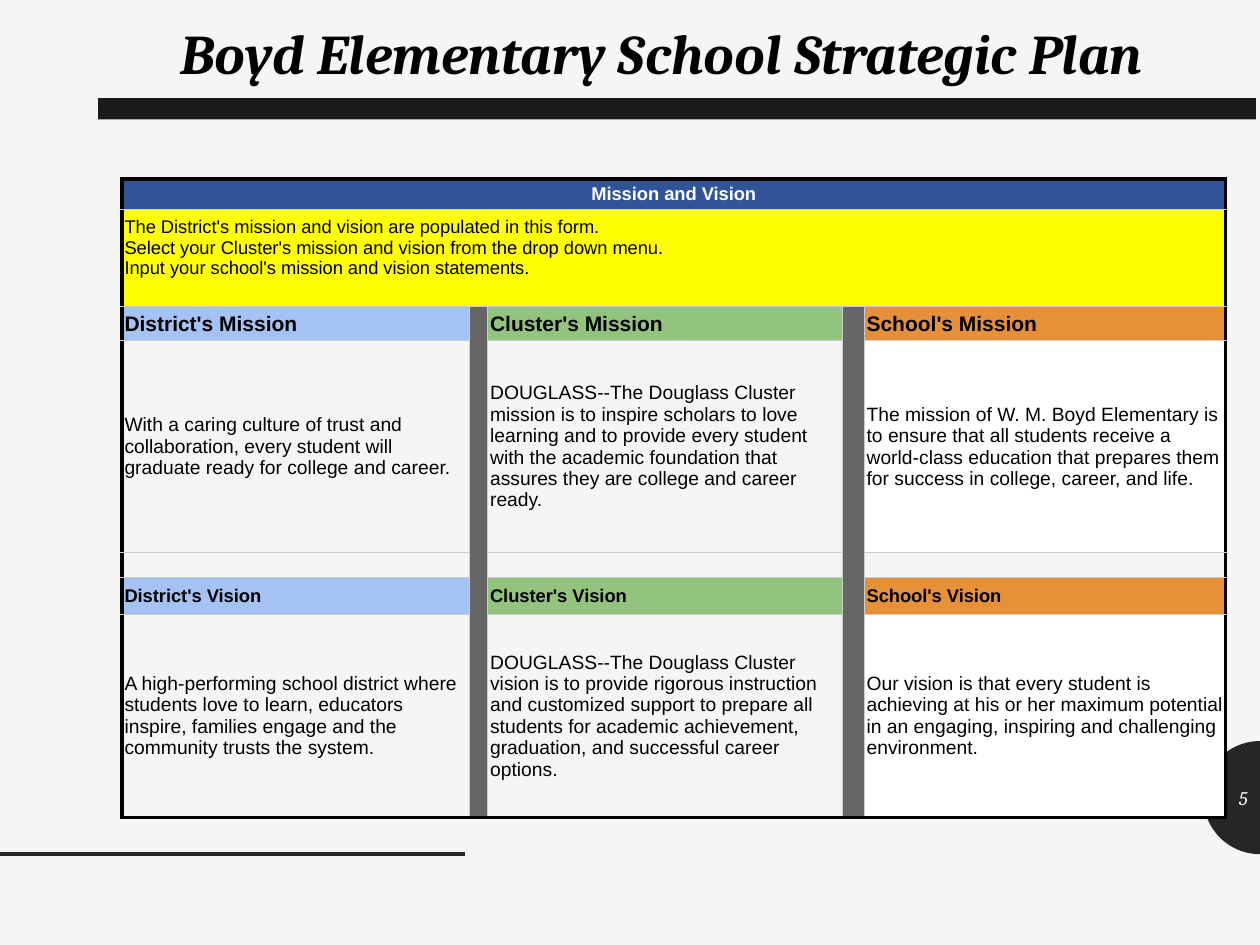
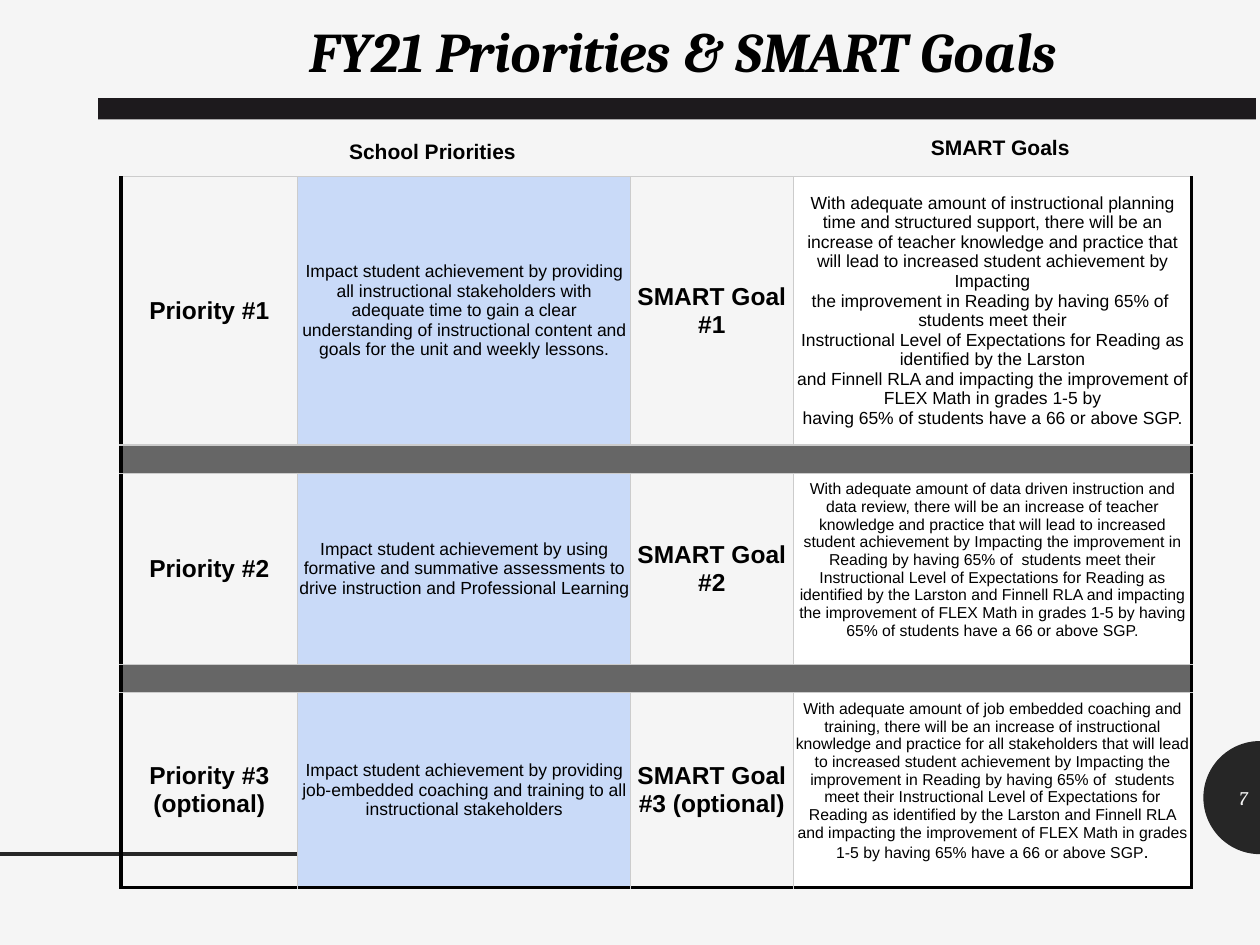
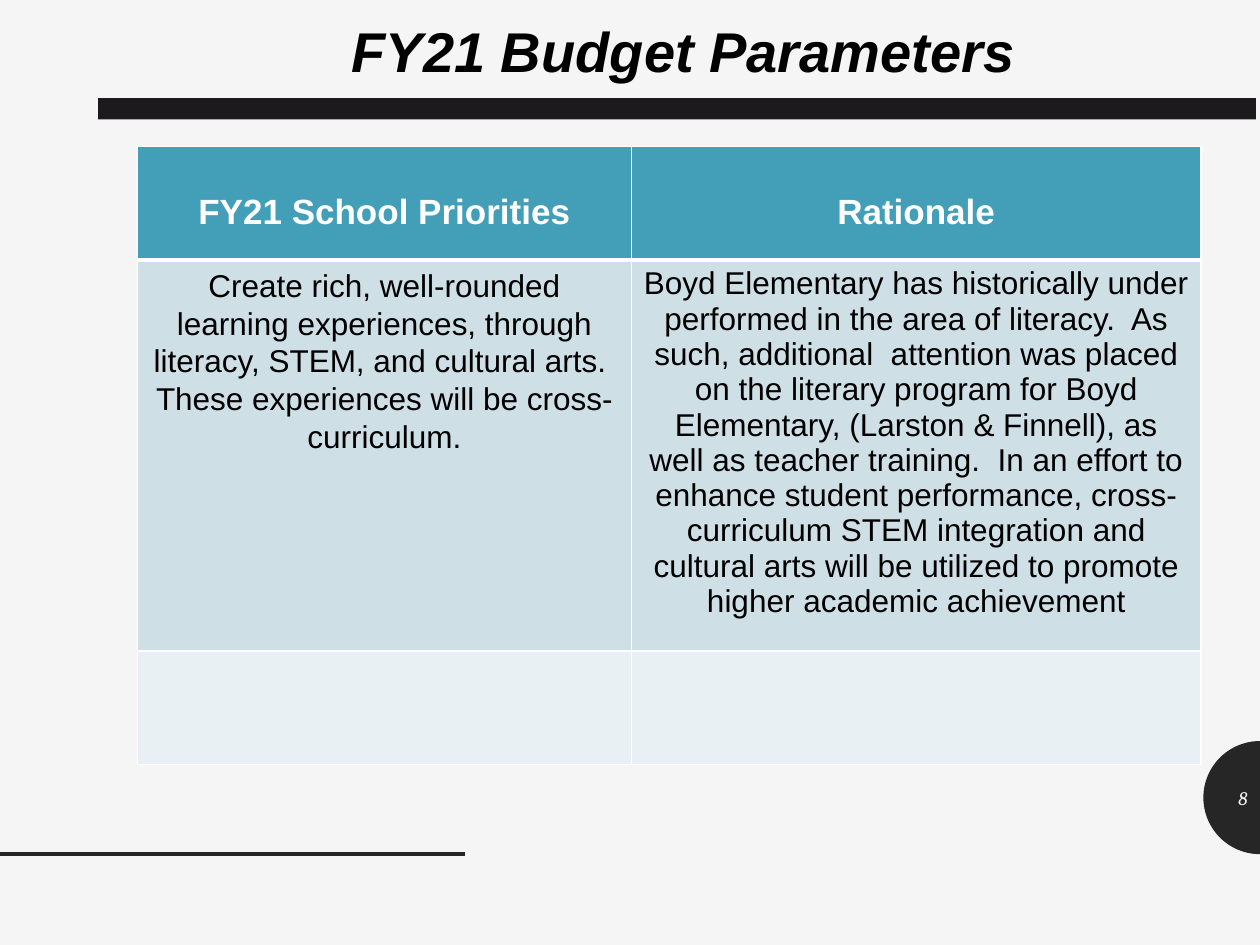
from math import cos, pi, sin

from lxml.etree import SubElement
from pptx import Presentation
from pptx.dml.color import RGBColor
from pptx.enum.shapes import MSO_CONNECTOR, MSO_SHAPE
from pptx.enum.text import MSO_ANCHOR as Anchor, PP_ALIGN as Align
from pptx.oxml import parse_xml
from pptx.oxml.ns import nsdecls, qn
from pptx.util import Cm, Pt

BLACK, WHITE, PAPER, DARK, BAND = "000000", "FFFFFF", "F5F5F5", "262626", "1D1A1D"
GRAY, RULE, NAVY, YELLOW = "666666", "CCCCCC", "305496", "FFFF00"
BLUE, GREEN, ORANGE, PALE_BLUE = "A4C2F4", "93C47D", "E69138", "C9DAF8"
TEAL, TEAL_MID, TEAL_PALE = "439EB7", "CFDFE6", "E9F0F3"

OUTER, INNER = (BLACK, 2.25), (RULE, 0.75)
THIN_WHITE, THICK_WHITE = (WHITE, 1), (WHITE, 3)

# Cell styles: font size, bold, colour, alignment, margins (left, top, right, bottom), anchor
TIGHT, TIGHTER = (0.05, 0.03, 0.05, 0.03), (0.03, 0.03, 0.03, 0.03)
ROOMY = (0.25, 0.13, 0.25, 0.13)
STYLES = {
    "banner": (10.5, True, WHITE, Align.CENTER, TIGHT, Anchor.MIDDLE),
    "guide": (10.5, False, BLACK, Align.LEFT, (0.05, 0.03, 0.05, 0.44), Anchor.MIDDLE),
    "mission": (12, True, BLACK, Align.LEFT, TIGHT, Anchor.MIDDLE),
    "vision": (10.5, True, BLACK, Align.LEFT, TIGHT, Anchor.MIDDLE),
    "statement": (11, False, BLACK, Align.LEFT, TIGHT, Anchor.MIDDLE),
    "label": (14, True, BLACK, Align.CENTER, TIGHTER, Anchor.MIDDLE),
    "goal": (10, False, BLACK, Align.CENTER, TIGHTER, Anchor.MIDDLE),
    "long goal": (9, False, BLACK, Align.CENTER, (0.03, 0.03, 0.03, 0.39), Anchor.MIDDLE),
    "heading": (20, True, WHITE, Align.CENTER, (0.25, 0.94, 0.25, 0.13), Anchor.TOP),
    "body": (18, False, BLACK, Align.CENTER, ROOMY, Anchor.TOP),
    "gap": (8, False, BLACK, Align.LEFT, TIGHTER, Anchor.MIDDLE),
}

# Each cell: text, style, fill
GAP = ("", "gap", None)
BAR = ("", "gap", GRAY)


def plan_row(style, texts, fills):
    district, cluster, school = [(text, style, fill) for text, fill in zip(texts, fills)]
    return [district, BAR, cluster, BAR, school]


HEADING_FILLS, STATEMENT_FILLS = (BLUE, GREEN, ORANGE), (None, None, WHITE)
MISSION_ROWS = [
    [("Mission and Vision", "banner", NAVY)] + [GAP] * 4,
    [("The District's mission and vision are populated in this form. \n"
      "Select your Cluster's mission and vision from the drop down menu. \n"
      "Input your school's mission and vision statements.", "guide", YELLOW)] + [GAP] * 4,
    plan_row("mission", ("District's Mission", "Cluster's Mission", "School's Mission"),
             HEADING_FILLS),
    plan_row("statement", (
        "With a caring culture of trust and collaboration, every student will graduate "
        "ready for college and career.",
        "DOUGLASS--The Douglass Cluster mission is to inspire scholars to love learning and "
        "to provide every student with the academic foundation that assures they are "
        "college and career ready.",
        "The mission of W. M. Boyd Elementary is to ensure that all students receive a "
        "world-class education that prepares them for success in college, career, and life."),
        STATEMENT_FILLS),
    plan_row("gap", ("", "", ""), (None, None, None)),
    plan_row("vision", ("District's Vision", "Cluster's Vision", "School's Vision"),
             HEADING_FILLS),
    plan_row("statement", (
        "A high-performing school district where students love to learn, educators inspire, "
        "families engage and the community trusts the system.",
        "DOUGLASS--The Douglass Cluster vision is to provide rigorous instruction and "
        "customized support to prepare all students for academic achievement, graduation, "
        "and successful career options.",
        "Our vision is that every student is achieving at his or her maximum potential in an "
        "engaging, inspiring and challenging environment."),
        STATEMENT_FILLS),
]


def goal_row(number, priority, goal, goal_style):
    return [(f"Priority #{number}", "label", None), (priority, "goal", PALE_BLUE),
            (f"SMART Goal #{number}", "label", None), (goal, goal_style, WHITE)]


GOAL_ROWS = [
    goal_row("1", "Impact student achievement by providing all instructional stakeholders with "
             "adequate time to gain a clear understanding of instructional content and goals "
             "for the unit and weekly lessons.",
             "With adequate amount of instructional planning time and structured support, there "
             "will be an increase of teacher knowledge and practice that will lead to increased "
             "student achievement by Impacting\n"
             "the improvement in Reading by having 65% of  students meet their\n"
             "Instructional Level of Expectations for Reading as identified by the Larston\n"
             "and Finnell RLA and impacting the improvement of FLEX Math in grades 1-5 by\n"
             "having 65% of students have a 66 or above SGP.", "goal"),
    [BAR] * 4,
    goal_row("2", "Impact student achievement by using formative and summative assessments to "
             "drive instruction and Professional Learning",
             "With adequate amount of data driven instruction and data review, there will be an "
             "increase of teacher knowledge and practice that will lead to increased student "
             "achievement by Impacting the improvement in Reading by having 65% of  students "
             "meet their Instructional Level of Expectations for Reading as identified by the "
             "Larston and Finnell RLA and impacting the improvement of FLEX Math in grades 1-5 "
             "by having 65% of students have a 66 or above SGP.", "long goal"),
    [BAR] * 4,
    goal_row("3 (optional)", "Impact student achievement by providing job-embedded coaching and "
             "training to all instructional stakeholders",
             "With adequate amount of job embedded coaching and training, there will be an "
             "increase of instructional knowledge and practice for all stakeholders that will "
             "lead to increased student achievement by Impacting the improvement in Reading by "
             "having 65% of  students meet their Instructional Level of Expectations for Reading "
             "as identified by the Larston and Finnell RLA and impacting the improvement of FLEX "
             "Math in grades 1-5 by having 65% have a 66 or above SGP.", "long goal"),
]

BUDGET_ROWS = [
    [("FY21 School Priorities", "heading", TEAL), ("Rationale", "heading", TEAL)],
    [("Create rich, well-rounded learning experiences, through literacy, STEM, and cultural "
      "arts.  These experiences will be cross-curriculum.", "body", TEAL_MID),
     ("Boyd Elementary has historically under performed in the area of literacy.  As such, "
      "additional  attention was placed on the literary program for Boyd Elementary, (Larston "
      "& Finnell), as well as teacher training.  In an effort to enhance student performance, "
      "cross-curriculum STEM integration and cultural arts will be utilized to promote higher "
      "academic achievement", "body", TEAL_MID)],
    [("", "body", TEAL_PALE)] * 2,
]

# Boxes are left, top, width, height in cm
TITLE_BOX = (2.44, 0.2, 22.68, 1.63)
PAGES = [
    dict(number=5, title="Boyd Elementary School Strategic Plan", font="Cambria",
         title_box=(1.24, 0.25, 24.21, 1.63), labels=[], rows=MISSION_ROWS, at=(2.46, 3.61),
         widths=(7.01, 0.36, 7.16, 0.43, 7.29),
         heights=(0.61, 1.96, 0.69, 4.27, 0.51, 0.74, 4.09),
         merges=[(0, 0, 0, 4), (1, 0, 1, 4), (2, 1, 6, 1), (2, 3, 6, 3)],
         edges=dict(L=OUTER, R=OUTER, T=OUTER, B=OUTER), inner=INNER),
    dict(number=7, title="FY21 Priorities & SMART Goals", font="Cambria", title_box=TITLE_BOX,
         labels=[("School Priorities", (6.55, 2.67, 4.34, 0.76)),
                 ("SMART Goals", (16.84, 2.59, 6.65, 0.76))],
         rows=GOAL_ROWS, at=(2.44, 3.56), widths=(3.56, 6.71, 3.28, 8.03),
         heights=(5.41, 0.57, 3.86, 0.57, 3.91), merges=[(1, 0, 1, 3), (3, 0, 3, 3)],
         edges=dict(L=OUTER, R=OUTER, T=INNER, B=OUTER), inner=INNER),
    dict(number=8, title="FY21 Budget Parameters", font="Arial", title_box=TITLE_BOX,
         labels=[], rows=BUDGET_ROWS, at=(2.77, 2.95), widths=(9.96, 11.48),
         heights=(2.29, 7.85, 2.29), merges=[],
         edges=dict.fromkeys("LRTB", THIN_WHITE), inner=THIN_WHITE),
]


def color(value):
    return RGBColor.from_string(value)


def set_font(font, size, value, name="Arial", bold=False, italic=False):
    font.size, font.name, font.bold, font.italic = Pt(size), name, bold, italic
    font.color.rgb = color(value)


def paint(shape, value):
    shape.shadow.inherit = False
    shape.fill.solid()
    shape.fill.fore_color.rgb = color(value)
    shape.line.fill.background()


def add_text(page, text, box, align, *font, anchor=Anchor.TOP, **font_options):
    frame = page.shapes.add_textbox(*map(Cm, box)).text_frame
    frame.word_wrap = True
    frame.vertical_anchor = anchor
    para = frame.paragraphs[0]
    para.text, para.alignment = text, align
    set_font(para.font, *font, **font_options)


def add_backdrop(page):
    """Half disc at the right edge, footer line and title band."""
    page.background.fill.solid()
    page.background.fill.fore_color.rgb = color(PAPER)

    center_x, center_y, radius, steps = 25.4, 16.08, 1.14, 48
    points = [(Cm(center_x - radius * sin(pi * i / steps)),
               Cm(center_y - radius * cos(pi * i / steps))) for i in range(steps + 1)]
    outline = page.shapes.build_freeform(*points[0], scale=1.0)
    outline.add_line_segments(points[1:], close=True)
    paint(outline.convert_to_shape(), DARK)

    line = page.shapes.add_connector(MSO_CONNECTOR.STRAIGHT, 0, Cm(17.22), Cm(9.37), Cm(17.22))
    line.line.color.rgb, line.line.width = color(DARK), Pt(2)
    SubElement(line._element.spPr, qn("a:effectLst"))

    band = page.shapes.add_shape(MSO_SHAPE.RECTANGLE, *map(Cm, (1.98, 1.98, 23.34, 0.43)))
    paint(band, BAND)


def set_borders(cell, borders):
    properties = cell._tc.get_or_add_tcPr()
    for place, side in enumerate("LRTB"):
        value, width = borders[side]
        properties.insert(place, parse_xml(
            f'<a:ln{side} {nsdecls("a")} w="{Pt(width)}"><a:solidFill>'
            f'<a:srgbClr val="{value}"/></a:solidFill></a:ln{side}>'))


def fill_cell(cell, text, style, fill):
    size, bold, value, align, margins, anchor = STYLES[style]
    cell.margin_left, cell.margin_top, cell.margin_right, cell.margin_bottom = map(Cm, margins)
    cell.vertical_anchor = anchor
    if fill:
        cell.fill.solid()
        cell.fill.fore_color.rgb = color(fill)
    else:
        cell.fill.background()
    para = cell.text_frame.paragraphs[0]
    para.text, para.alignment = text, align
    set_font(para.font, size, value, bold=bold)
    if not text:
        SubElement(para._p, qn("a:endParaRPr"), sz=str(size * 100))


def add_grid(page, rows, at, widths, heights, merges, edges, inner):
    size = (sum(widths), sum(heights))
    table = page.shapes.add_table(len(rows), len(widths), *map(Cm, at + size)).table
    table.first_row = table.horz_banding = False
    for column, width in zip(table.columns, widths):
        column.width = Cm(width)
    for row, height in zip(table.rows, heights):
        row.height = Cm(height)
    for top, left, bottom, right in merges:
        table.cell(top, left).merge(table.cell(bottom, right))
    for r, row in enumerate(rows):
        for c, content in enumerate(row):
            cell = table.cell(r, c)
            fill_cell(cell, *content)
            tall, wide = (cell.span_height, cell.span_width) if cell.is_merge_origin else (1, 1)
            at_edge = dict(L=c == 0, R=c + wide == len(widths), T=r == 0, B=r + tall == len(rows))
            set_borders(cell, {side: edges[side] if at_edge[side] else inner for side in "LRTB"})
    return table


def style_budget(table):
    """Thick rule under the headings and looser lines in the first answer."""
    for c in range(2):
        for r, side in ((0, "B"), (1, "T")):
            border = table.cell(r, c)._tc.tcPr.find(qn(f"a:ln{side}"))
            border.set("w", str(Pt(THICK_WHITE[1])))
    answer = table.cell(1, 0).text_frame.paragraphs[0]
    answer.line_spacing, answer.space_after = 1.07, Pt(8)


def enlarge_last_stop(table):
    para = table.cell(4, 3).text_frame.paragraphs[0]
    para.runs[0].text = para.text[:-1]
    span = para.add_run()
    span.text, span.font.size = ".", Pt(10.5)


FINISH = {7: enlarge_last_stop, 8: style_budget}


def main():
    deck = Presentation()
    deck.slide_width, deck.slide_height = Cm(25.4), Cm(19.05)
    for content in PAGES:
        page = deck.slides.add_slide(deck.slide_layouts[6])
        add_backdrop(page)
        add_text(page, content["title"], content["title_box"], Align.CENTER, 32, BLACK,
                 name=content["font"], bold=True, italic=True)
        for label, box in content["labels"]:
            add_text(page, label, box, Align.CENTER, 12, BLACK, bold=True)
        keys = ("rows", "at", "widths", "heights", "merges", "edges", "inner")
        table = add_grid(page, *(content[key] for key in keys))
        if content["number"] in FINISH:
            FINISH[content["number"]](table)
        add_text(page, str(content["number"]), (24.26, 15.57, 1.14, 1.02), Align.RIGHT, 11, PAPER,
                 name="Cambria", italic=True, anchor=Anchor.MIDDLE)
    deck.save("out.pptx")


if __name__ == "__main__":
    main()
